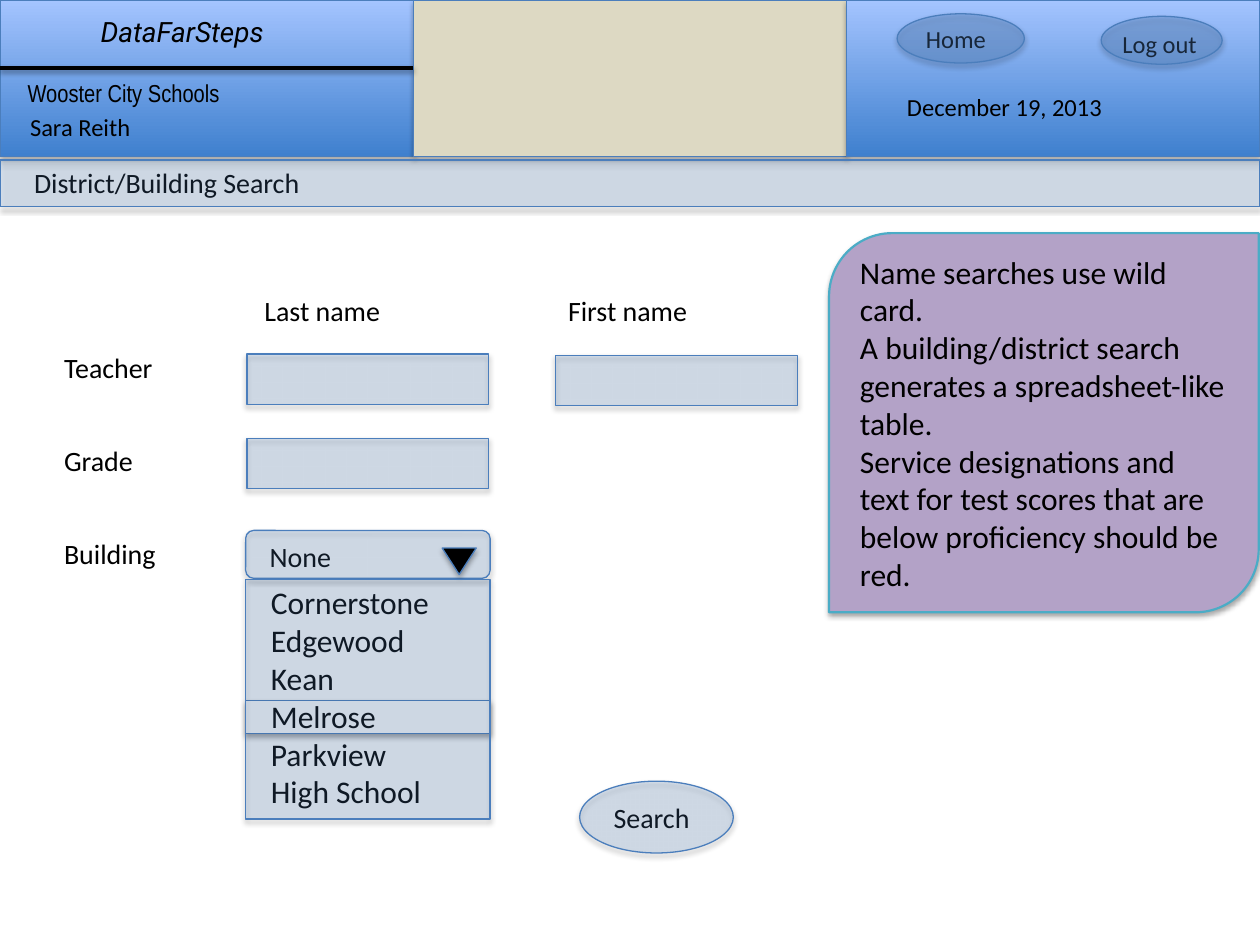
from dataclasses import dataclass, field
from typing import Optional

from lxml.etree import SubElement
from pptx import Presentation
from pptx.dml.color import RGBColor
from pptx.enum.shapes import MSO_CONNECTOR, MSO_SHAPE
from pptx.enum.text import MSO_ANCHOR, MSO_AUTO_SIZE, PP_ALIGN
from pptx.oxml.ns import qn
from pptx.util import Inches, Pt

deck = Presentation()
deck.slide_width, deck.slide_height = Inches(10), Inches(7.5)
page = deck.slides.add_slide(deck.slide_layouts[1])
COLUMN = deck.slide_width / 100
ROW = deck.slide_height / 75

BLUE, EDGE, BLACK, WHITE = "4F81BD", "4B7EBC", "000000", "FFFFFF"
HEADER_STOPS = ("3F80CE", "A4C4FF")
SCHOOLS = ["Cornerstone", "Edgewood", "Kean", "Melrose", "Parkview", "High School"]
ADVICE = [
    "Name searches use wild card.",
    "A building/district search generates a spreadsheet-like table.",
    "Service designations and text for test scores that are below proficiency should be red.",
]


@dataclass
class Area:
    column: float
    row: float
    columns: float
    rows: float

    def frame(self) -> dict:
        return {
            "left": round(self.column * COLUMN),
            "top": round(self.row * ROW),
            "width": round(self.columns * COLUMN),
            "height": round(self.rows * ROW),
        }


@dataclass
class Panel:
    area: Area
    kind: MSO_SHAPE = MSO_SHAPE.RECTANGLE
    fill: str = BLUE
    opacity: int = 100
    edge: str = EDGE
    weight: float = 0.75
    stops: tuple = ()
    flipped: bool = False


@dataclass
class Label:
    area: Area
    lines: list
    font: dict = field(default_factory=dict)
    frame: dict = field(default_factory=dict)


def colour(value: str) -> RGBColor:
    return RGBColor.from_string(value)


def apply(target, values: dict) -> None:
    for name, value in values.items():
        setattr(target, name, value)


def cast_shadow(shape, opacity: int, distance: float) -> None:
    properties = shape.element.spPr
    effects = properties.find(qn("a:effectLst"))
    if effects is None:
        effects = SubElement(properties, qn("a:effectLst"))
    shadow = SubElement(effects, qn("a:outerShdw"), blurRad=str(Pt(3.1)),
                        dist=str(Pt(distance)), dir="5400000", rotWithShape="0")
    tone = SubElement(shadow, qn("a:srgbClr"), val=BLACK)
    SubElement(tone, qn("a:alpha"), val=str(opacity * 1000))


def draw_panel(panel: Panel):
    shape = page.shapes.add_shape(panel.kind, *panel.area.frame().values())
    if panel.stops:
        shape.fill.gradient()
        shape.fill.gradient_angle = 90
        for stop, value in zip(shape.fill.gradient_stops, panel.stops):
            stop.color.rgb = colour(value)
    else:
        shape.fill.solid()
        shape.fill.fore_color.rgb = colour(panel.fill)
        if panel.opacity < 100:
            tone = shape.element.spPr.find(qn("a:solidFill")).find(qn("a:srgbClr"))
            SubElement(tone, qn("a:alpha"), val=str(panel.opacity * 1000))
    shape.line.color.rgb = colour(panel.edge)
    shape.line.width = Pt(panel.weight)
    shape.shadow.inherit = False
    cast_shadow(shape, 35, 1.8)
    if panel.flipped:
        shape.element.spPr.find(qn("a:xfrm")).set("flipV", "1")
    return shape


def write(box, lines: list, font: dict, frame: Optional[dict] = None) -> None:
    words = box.text_frame
    apply(words, {"word_wrap": True, "auto_size": MSO_AUTO_SIZE.NONE,
                  "vertical_anchor": MSO_ANCHOR.TOP} | (frame or {}))
    for number, line in enumerate(lines):
        para = words.add_paragraph() if number else words.paragraphs[0]
        apply(para, {"alignment": PP_ALIGN.LEFT, "space_before": Pt(0)})
        span = para.add_run()
        span.text = line
        apply(span.font, {"name": "Calibri", "size": Pt(16)} | font)
        span.font.color.rgb = colour(BLACK)


def draw_label(label: Label) -> None:
    box = page.shapes.add_textbox(*label.area.frame().values())
    write(box, label.lines, label.font, label.frame)


def draw_rule(start: tuple, end: tuple) -> None:
    rule = page.shapes.add_connector(
        MSO_CONNECTOR.STRAIGHT, round(start[0] * COLUMN), round(start[1] * ROW),
        round(end[0] * COLUMN), round(end[1] * ROW))
    rule.line.color.rgb = colour(BLACK)
    rule.line.width = Pt(2)
    cast_shadow(rule, 38, 1.6)


def place_list(box, area: Area, lines: list) -> None:
    apply(box, area.frame())
    write(box, lines, {"size": Pt(18)})
    for para in box.text_frame.paragraphs:
        properties = para._p.get_or_add_pPr()
        properties.set("marL", "0")
        properties.set("indent", "0")
        SubElement(properties, qn("a:buNone"))
    box.element.getparent().append(box.element)


SMALL = {"size": Pt(14)}
OVAL = MSO_SHAPE.OVAL
SIDE, MIDDLE, HEADER_ROWS = 32.8, 34.4, 12.4
FIELD = (19.2, 4)

header = [
    Panel(Area(0, 0, SIDE, HEADER_ROWS), stops=HEADER_STOPS),
    Panel(Area(SIDE, 0, MIDDLE, HEADER_ROWS), fill="DDD9C3"),
    Panel(Area(SIDE + MIDDLE, 0, SIDE, HEADER_ROWS), stops=HEADER_STOPS),
    Label(Area(1.4, 8.4, 13.7, 3.4), ["Sara Reith"], SMALL),
    Label(Area(71, 6.8, 18.7, 3.4), ["December 19, 2013"], SMALL),
    Label(Area(88.1, 1.8, 9, 3.4), ["Log out"], SMALL),
    Panel(Area(87.4, 1.3, 9.6, 3.8), OVAL, opacity=30),
    Label(Area(72.5, 1.4, 7.8, 3.4), ["Home"], SMALL),
    Panel(Area(71.2, 1.1, 10.1, 3.9), OVAL, opacity=30),
    Label(Area(1.2, 5.7, 18.9, 3.4), ["Wooster City Schools"], SMALL | {"name": "Arial Narrow"}),
    Label(Area(7, 0.7, 18.9, 3.7), ["DataFarSteps"], {"name": "Roboto", "italic": True}),
]
form = [
    Label(Area(column, row, 18.2, 3.7), [text])
    for column, row, text in [(4.1, 27.3, "Teacher"), (4.1, 34.7, "Grade"), (4.1, 42.1, "Building"),
                              (20, 22.8, "Last name"), (44.1, 22.8, "First name")]
] + [
    Panel(Area(column, row, *FIELD), opacity=20)
    for column, row in [(19.6, 28.1), (44.1, 28.2), (19.6, 34.8)]
] + [
    Label(Area(46.2, 63.5, 11.8, 2.7), ["Search"], frame={
        "margin_left": Inches(0.25), "margin_top": 0, "margin_right": 0, "margin_bottom": 0}),
    Panel(Area(46, 62, 12.2, 5.7), OVAL, opacity=20),
    Panel(Area(0, 12.7, 100, 3.7), opacity=20),
    Panel(Area(19.5, 55.6, 19.4, 2.6), fill=WHITE),
    Label(Area(20.5, 42.5, 15.8, 3.3), ["None"], frame={
        "margin_left": Inches(0.09), "margin_top": Inches(0.05),
        "margin_bottom": Inches(0.05), "vertical_anchor": MSO_ANCHOR.MIDDLE}),
    Panel(Area(19.5, 42.1, 19.4, 3.8), MSO_SHAPE.ROUNDED_RECTANGLE, opacity=20),
    Panel(Area(35.1, 43.5, 2.7, 2.1), MSO_SHAPE.ISOSCELES_TRIANGLE, BLACK, flipped=True),
]


def draw(items: list) -> None:
    for item in items:
        if isinstance(item, Panel):
            draw_panel(item)
        else:
            draw_label(item)


title, schools = page.placeholders
draw(header)
draw_rule((0, 5.4), (SIDE, 5.4))
apply(title, Area(1.7, 12.6, 23.7, 3.7).frame())
write(title, ["District/Building Search"], {})
draw(form)
callout = draw_panel(Panel(Area(65.8, 18.5, 34.1, 30.1), MSO_SHAPE.ROUND_2_DIAG_RECTANGLE,
                           "B3A2C7", edge="4BACC6", weight=1.25))
write(callout, ADVICE, {"size": Pt(18)}, {"vertical_anchor": MSO_ANCHOR.MIDDLE})
place_list(schools, Area(20.5, 45.8, 16.5, 19.2), SCHOOLS)
draw_panel(Panel(Area(19.5, 46, 19.4, 19), opacity=20))
deck.save("out.pptx")
